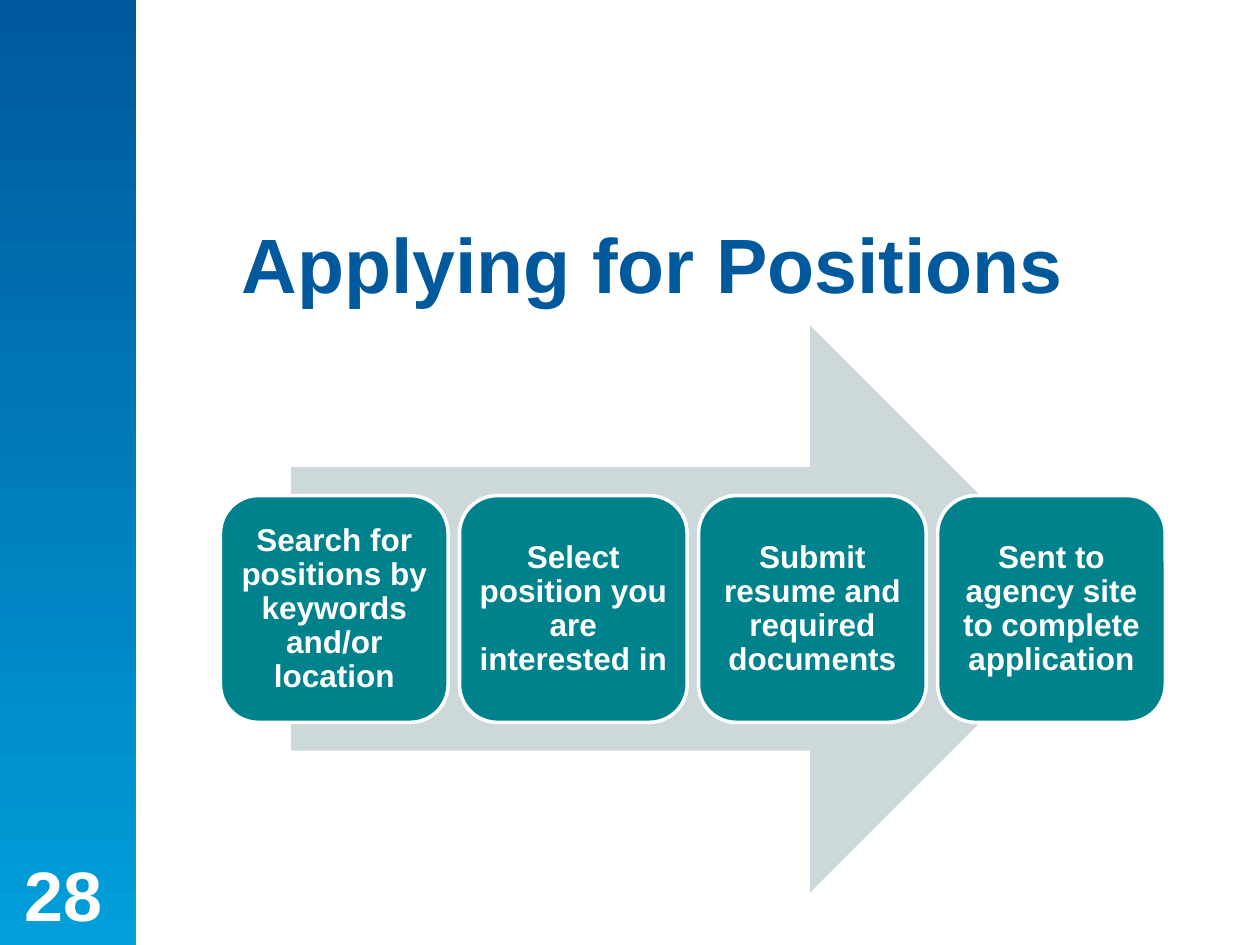
from pptx import Presentation
from pptx.dml.color import RGBColor
from pptx.enum import shapes, text
from pptx.util import Pt

COLORS = {
    "navy": "00599C",
    "sky": "009FDA",
    "teal": "00828C",
    "mist": "CCD8DA",
    "white": "FFFFFF",
}
STEPS = [
    "Search for positions by keywords and/or location",
    "Select position you are interested in",
    "Submit resume and required documents",
    "Sent to agency site to complete application",
]


def color(name):
    return RGBColor.from_string(COLORS[name])


class SlideBuilder:
    font = "Arial"

    def __init__(self, slide):
        self.slide = slide

    def set_text(self, frame, words, size, tint, align, anchor, inset=0, spacing=None):
        frame.word_wrap = True
        frame.vertical_anchor = anchor
        frame.margin_left = frame.margin_right = Pt(inset)
        frame.margin_top = frame.margin_bottom = Pt(inset)
        paragraph = frame.paragraphs[0]
        paragraph.text = words
        paragraph.alignment = align
        if spacing:
            paragraph.line_spacing = spacing
        paragraph.font.name = self.font
        paragraph.font.size = Pt(size)
        paragraph.font.bold = True
        paragraph.font.color.rgb = color(tint)

    def label(self, box, words, size, tint, align, anchor):
        frame = self.slide.shapes.add_textbox(*map(Pt, box)).text_frame
        self.set_text(frame, words, size, tint, align, anchor)

    def shape(self, preset, box, fill=None):
        shape = self.slide.shapes.add_shape(preset, *map(Pt, box))
        shape.shadow.inherit = False
        shape.line.fill.background()
        if fill:
            shape.fill.solid()
            shape.fill.fore_color.rgb = color(fill)
        return shape

    def gradient_band(self, box, top, bottom):
        fill = self.shape(shapes.MSO_SHAPE.RECTANGLE, box).fill
        fill.gradient()
        fill.gradient_angle = 270
        for stop, tint, position in zip(fill.gradient_stops, (top, bottom), (0, 1)):
            stop.color.rgb = color(tint)
            stop.position = position

    def step(self, box, words):
        card = self.shape(shapes.MSO_SHAPE.ROUNDED_RECTANGLE, box, "teal")
        card.line.color.rgb = color("white")
        card.line.width = Pt(2)
        self.set_text(card.text_frame, words, 18, "white", text.PP_ALIGN.CENTER,
                      text.MSO_ANCHOR.MIDDLE, inset=5.2, spacing=0.9)


def main():
    prs = Presentation()
    prs.slide_width, prs.slide_height = Pt(720), Pt(540)
    builder = SlideBuilder(prs.slides.add_slide(prs.slide_layouts[6]))

    # Side band and title
    builder.gradient_band((0, 0, 77.76, 540), "navy", "sky")
    builder.label((138.24, 120.24, 563.76, 59.76), "Applying for Positions", 44,
                  "navy", text.PP_ALIGN.LEFT, text.MSO_ANCHOR.MIDDLE)

    # Process arrow with its evenly spaced steps
    builder.shape(shapes.MSO_SHAPE.RIGHT_ARROW, (166.4, 186, 458.6, 324), "mist")
    first_left, pitch = 126, 136.6
    for index, words in enumerate(STEPS):
        builder.step((first_left + index * pitch, 283.2, 130.1, 129.6), words)

    # Page number
    builder.label((6.5, 486.7, 59.8, 36), "28", 40, "white",
                  text.PP_ALIGN.CENTER, text.MSO_ANCHOR.TOP)

    prs.save("out.pptx")


if __name__ == "__main__":
    main()
